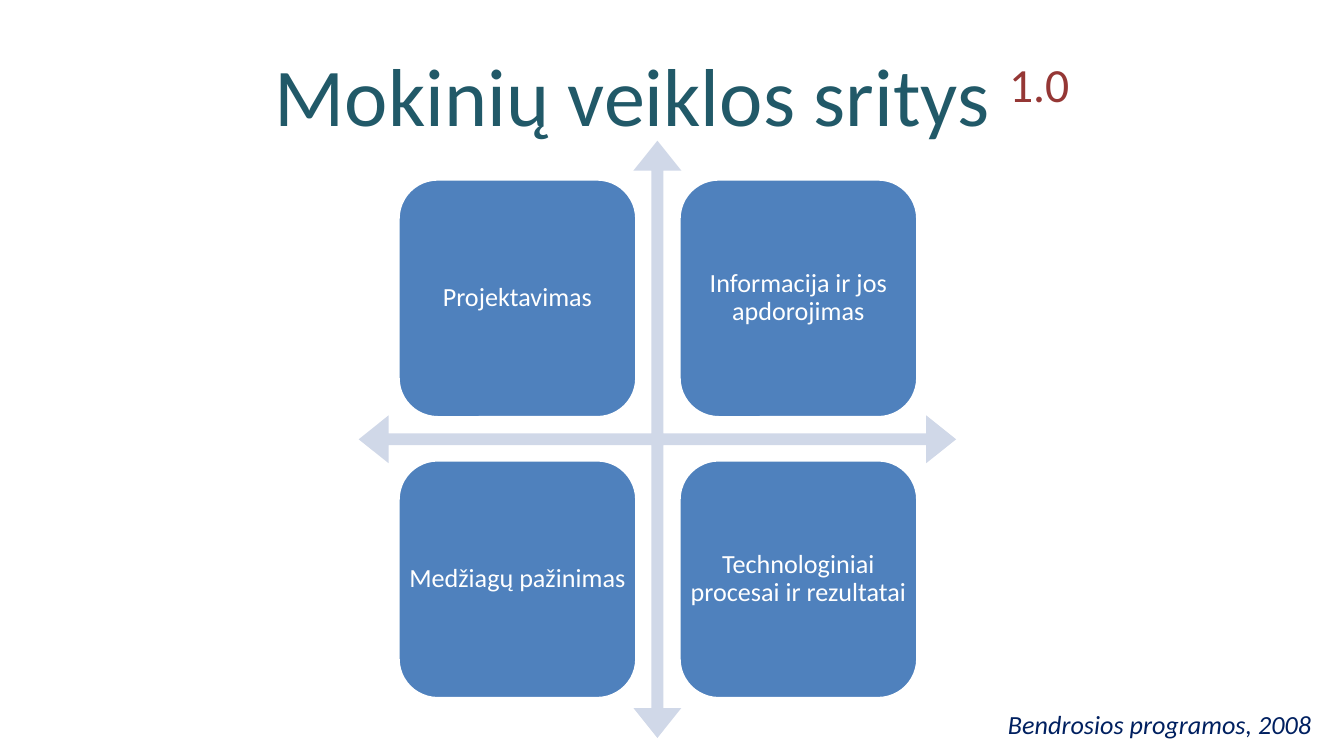
import dataclasses

import pptx
import pptx.dml.color
import pptx.enum.shapes
import pptx.enum.text
import pptx.util

Cm = pptx.util.Cm
SHAPE = pptx.enum.shapes.MSO_SHAPE
ALIGN = pptx.enum.text.PP_ALIGN
ANCHOR = pptx.enum.text.MSO_ANCHOR


@dataclasses.dataclass(frozen=True)
class Theme:
    font: str = "Calibri"
    title: str = "215968"
    version: str = "953735"
    arrow: str = "D0D8E8"
    tile: str = "4F81BD"
    light: str = "FFFFFF"
    source: str = "002060"
    title_size: int = 44
    body_size: int = 14
    border: int = 2


class SlideBuilder:
    """Draws styled elements on the current slide."""

    def __init__(self, page, theme):
        self.page = page
        self.theme = theme

    def rgb(self, value):
        return pptx.dml.color.RGBColor.from_string(value)

    def format_span(self, span, size, color):
        span.font.name = self.theme.font
        span.font.size = pptx.util.Pt(size)
        span.font.color.rgb = self.rgb(color)

    def title(self, text, version, left, top, width, height):
        box = self.page.shapes.title
        box.left, box.top, box.width, box.height = map(Cm, (left, top, width, height))
        frame = box.text_frame
        frame.vertical_anchor = ANCHOR.MIDDLE
        frame.text = text
        para = frame.paragraphs[0]
        para.alignment = ALIGN.CENTER
        self.format_span(para.runs[0], self.theme.title_size, self.theme.title)
        span = para.add_run()
        span.text = version
        self.format_span(span, self.theme.title_size, self.theme.version)
        span.font._element.set("baseline", "30000")

    def shape(self, kind, fill, left, top, width, height):
        shape = self.page.shapes.add_shape(kind, *map(Cm, (left, top, width, height)))
        shape.shadow.inherit = False
        shape.fill.solid()
        shape.fill.fore_color.rgb = self.rgb(fill)
        shape.line.fill.background()
        return shape

    def cross_arrow(self, left, top, size):
        arrow = self.shape(SHAPE.QUAD_ARROW, self.theme.arrow, left, top, size, size)
        for index, value in enumerate((0.02, 0.04, 0.05)):
            arrow.adjustments[index] = value

    def text(self, text, color, left, top, width, height):
        box = self.page.shapes.add_textbox(*map(Cm, (left, top, width, height)))
        box.text_frame.text = text
        para = box.text_frame.paragraphs[0]
        self.format_span(para.runs[0], self.theme.body_size, color)
        return box.text_frame, para

    def tile(self, text, left, top, size):
        tile = self.shape(SHAPE.ROUNDED_RECTANGLE, self.theme.tile, left, top, size, size)
        tile.line.color.rgb = self.rgb(self.theme.light)
        tile.line.width = pptx.util.Pt(self.theme.border)
        frame, para = self.text(text, self.theme.light, left, top, size, size)
        frame.word_wrap = True
        frame.vertical_anchor = ANCHOR.MIDDLE
        frame.margin_left = frame.margin_right = Cm(0.15)
        frame.margin_top = frame.margin_bottom = Cm(0.15)
        para.alignment = ALIGN.CENTER
        para.line_spacing = 0.9

    def source(self, text, left, top, width, height):
        frame, para = self.text(text, self.theme.source, left, top, width, height)
        frame.word_wrap = False
        frame.auto_size = pptx.enum.text.MSO_AUTO_SIZE.SHAPE_TO_FIT_TEXT
        para.runs[0].font.italic = True


def main():
    deck = pptx.Presentation()
    deck.slide_width, deck.slide_height = Cm(25.4), Cm(14.29)
    page = deck.slides.add_slide(deck.slide_layouts[5])
    builder = SlideBuilder(page, Theme())

    builder.title("Mokinių veiklos sritys ", "1.0", 1.27, 0.58, 22.86, 2.39)
    builder.cross_arrow(6.78, 2.66, 11.29)
    areas = (
        "Projektavimas",
        "Informacija ir jos apdorojimas",
        "Medžiagų pažinimas",
        "Technologiniai procesai ir rezultatai",
    )
    pitch = 5.31
    for index, area in enumerate(areas):
        row, column = divmod(index, 2)
        builder.tile(area, 7.52 + column * pitch, 3.38 + row * pitch, 4.52)
    builder.source("Bendrosios programos, 2008", 18.8, 13.26, 6.3, 0.86)

    deck.save("out.pptx")


if __name__ == "__main__":
    main()
